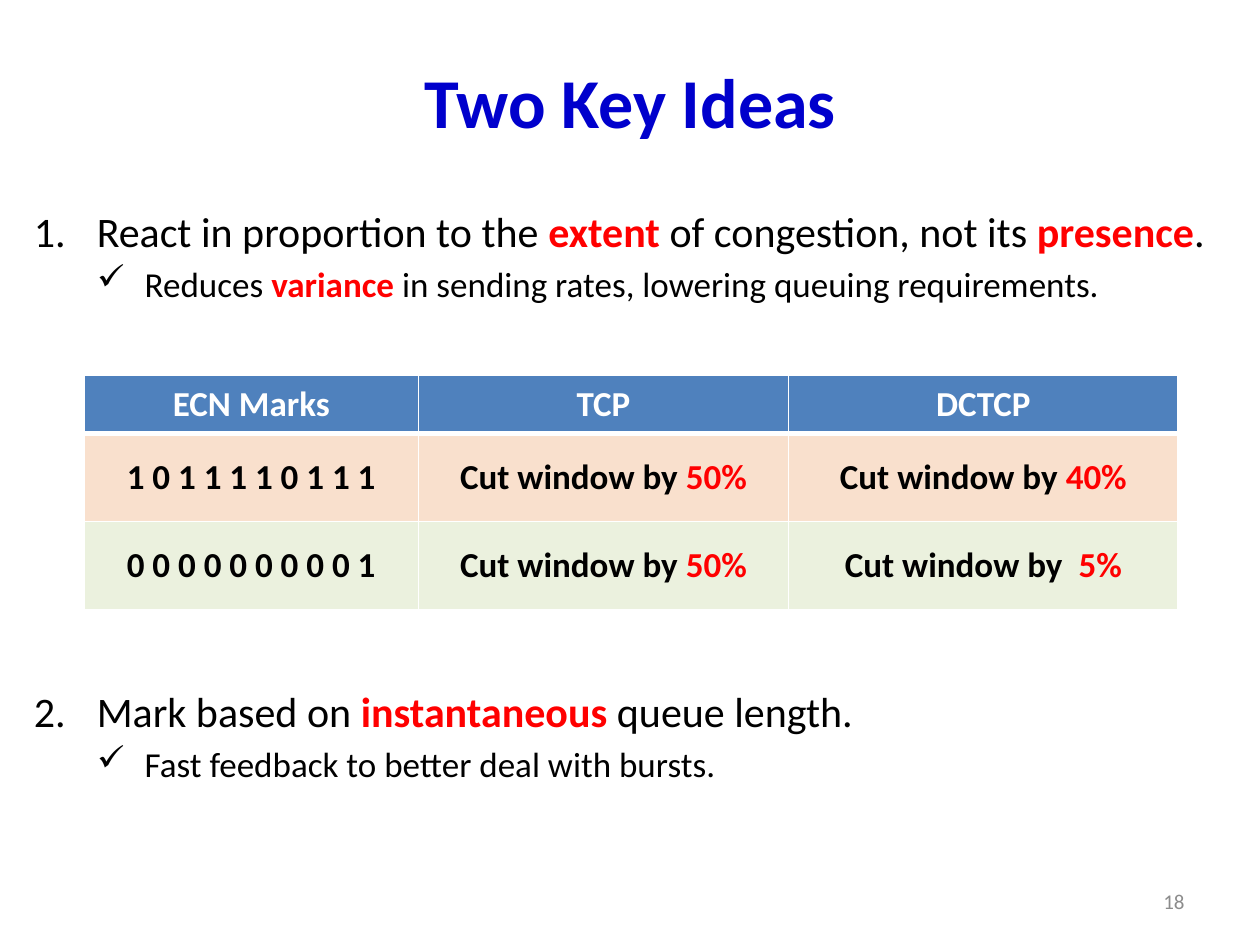
from lxml import etree
from pptx import Presentation
from pptx.dml.color import RGBColor
from pptx.enum.text import MSO_ANCHOR, PP_ALIGN
from pptx.oxml.ns import qn
from pptx.util import Inches, Pt

LEFT, MID, RIGHT = PP_ALIGN.LEFT, PP_ALIGN.CENTER, PP_ALIGN.RIGHT
TOP, CORE = MSO_ANCHOR.TOP, MSO_ANCHOR.MIDDLE
TITLE_ONLY = 5
FONT = "Calibri"
HUES = {
    "title": "0000CC", "text": "000000", "key": "FF0000", "page": "8C8C8C",
    "white": "FFFFFF", "head": "4F81BD", "peach": "F9E0CD", "sage": "EBF1DE",
}


def hue(name):
    """Return the named colour."""
    return RGBColor.from_string(HUES[name])


def write(para, text, size=20, color="text", bold=False, align=LEFT, gap=0):
    """Fill a paragraph; parts between asterisks are bold key words."""
    para.alignment = align
    para.space_before = Pt(gap)
    for i, part in enumerate(text.split("*")):
        if part:
            key = i % 2 == 1
            run = para.add_run()
            run.text = part
            run.font.name, run.font.size = FONT, Pt(size)
            run.font.bold = bold or key
            run.font.color.rgb = hue("key" if key else color)


def mark(para, left, hang, tag, font=None, **attrs):
    """Give a paragraph a hanging indent and a bullet or number."""
    props = para._p.get_or_add_pPr()
    props.set("marL", str(Inches(left)))
    props.set("indent", str(-Inches(hang)))
    if font:
        etree.SubElement(props, qn("a:buFont"), typeface=font)
    etree.SubElement(props, qn(tag), **attrs)


def edge(cell, sides):
    """Draw white cell borders of the given widths in points."""
    props = cell._tc.get_or_add_tcPr()
    for i, (side, width) in enumerate(sides.items()):
        line = etree.Element(qn(f"a:ln{side}"), w=str(Pt(width)))
        fill = etree.SubElement(line, qn("a:solidFill"))
        etree.SubElement(fill, qn("a:srgbClr"), val=HUES["white"])
        props.insert(i, line)


class Deck:
    """Holds the slide and its grid of 100 columns and 75 rows."""

    def __init__(self):
        """Start a deck with one title-only slide."""
        self.prs = Presentation()
        self.prs.slide_width, self.prs.slide_height = Inches(10), Inches(7.5)
        self.col = self.prs.slide_width / 100
        self.row = self.prs.slide_height / 75
        layout = self.prs.slide_layouts[TITLE_ONLY]
        self.slide = self.prs.slides.add_slide(layout)

    def place(self, x, y, w, h):
        """Turn columns and rows into lengths."""
        units = (self.col, self.row) * 2
        return [round(n * unit) for n, unit in zip((x, y, w, h), units)]

    def title(self, text, *at):
        """Move and fill the title."""
        box = self.slide.shapes.title
        box.left, box.top, box.width, box.height = self.place(*at)
        box.text_frame.vertical_anchor = CORE
        write(box.text_frame.paragraphs[0], text, size=40, color="title",
              bold=True, align=MID)

    def text(self, *at, anchor=TOP):
        """Add a wrapping text box and return its frame."""
        frame = self.slide.shapes.add_textbox(*self.place(*at)).text_frame
        frame.word_wrap = True
        frame.vertical_anchor = anchor
        return frame

    def idea(self, num, head, note, *at):
        """Add a numbered idea with a ticked note below it."""
        frame = self.text(*at)
        para = frame.paragraphs[0]
        write(para, head, size=24)
        mark(para, 0.5, 0.5, "a:buAutoNum", type="arabicPeriod",
             startAt=str(num))
        para = frame.add_paragraph()
        write(para, note, gap=4)
        mark(para, 0.88, 0.38, "a:buChar", font="Wingdings", char="ü")

    def page(self, num, *at):
        """Add the page number."""
        frame = self.text(*at, anchor=CORE)
        write(frame.paragraphs[0], num, size=12, color="page", align=RIGHT)

    def table(self, data, fills, cols, rows, x, y):
        """Add a table with a heavy line below its header."""
        at = self.place(x, y, sum(cols), sum(rows))
        grid = self.slide.shapes.add_table(len(rows), len(cols), *at).table
        for c, width in enumerate(cols):
            grid.columns[c].width = round(width * self.col)
        for r, (line, fill) in enumerate(zip(data, fills)):
            grid.rows[r].height = round(rows[r] * self.row)
            sides = {"L": 1, "R": 1, "T": 3 if r == 1 else 1,
                     "B": 3 if r == 0 else 1}
            for c, text in enumerate(line):
                cell = grid.cell(r, c)
                cell.vertical_anchor = CORE
                cell.margin_left = cell.margin_right = Inches(0.12)
                cell.margin_top = cell.margin_bottom = Inches(0.06)
                cell.fill.solid()
                cell.fill.fore_color.rgb = hue(fill)
                edge(cell, sides)
                write(cell.text_frame.paragraphs[0], text, bold=True,
                      align=MID, color="text" if r else "white")


def main():
    """Build and save the slide."""
    deck = Deck()
    deck.title("Two Key Ideas", 5, 1.7, 90, 12.5)
    deck.idea(1, "React in proportion to the *extent* of congestion, "
              "not its *presence*.",
              "Reduces *variance* in sending rates, "
              "lowering queuing requirements.", 1.7, 15.8, 98.3, 9)
    deck.table(
        [["ECN Marks", "TCP", "DCTCP"],
         ["1 0 1 1 1 1 0 1 1 1", "Cut window by *50%*",
          "Cut window by *40%*"],
         ["0 0 0 0 0 0 0 0 0 1", "Cut window by *50%*",
          "Cut window by  *5%*"]],
        ["head", "peach", "sage"],
        [26.5, 29.4, 30.9], [4.6, 7, 7], 6.7, 29.8)
    deck.idea(2, "Mark based on *instantaneous* queue length.",
              "Fast feedback to better deal with bursts.",
              1.7, 53.9, 98.3, 9)
    deck.page("18", 71.7, 69.5, 23.3, 4)
    deck.prs.save("out.pptx")


if __name__ == "__main__":
    main()
